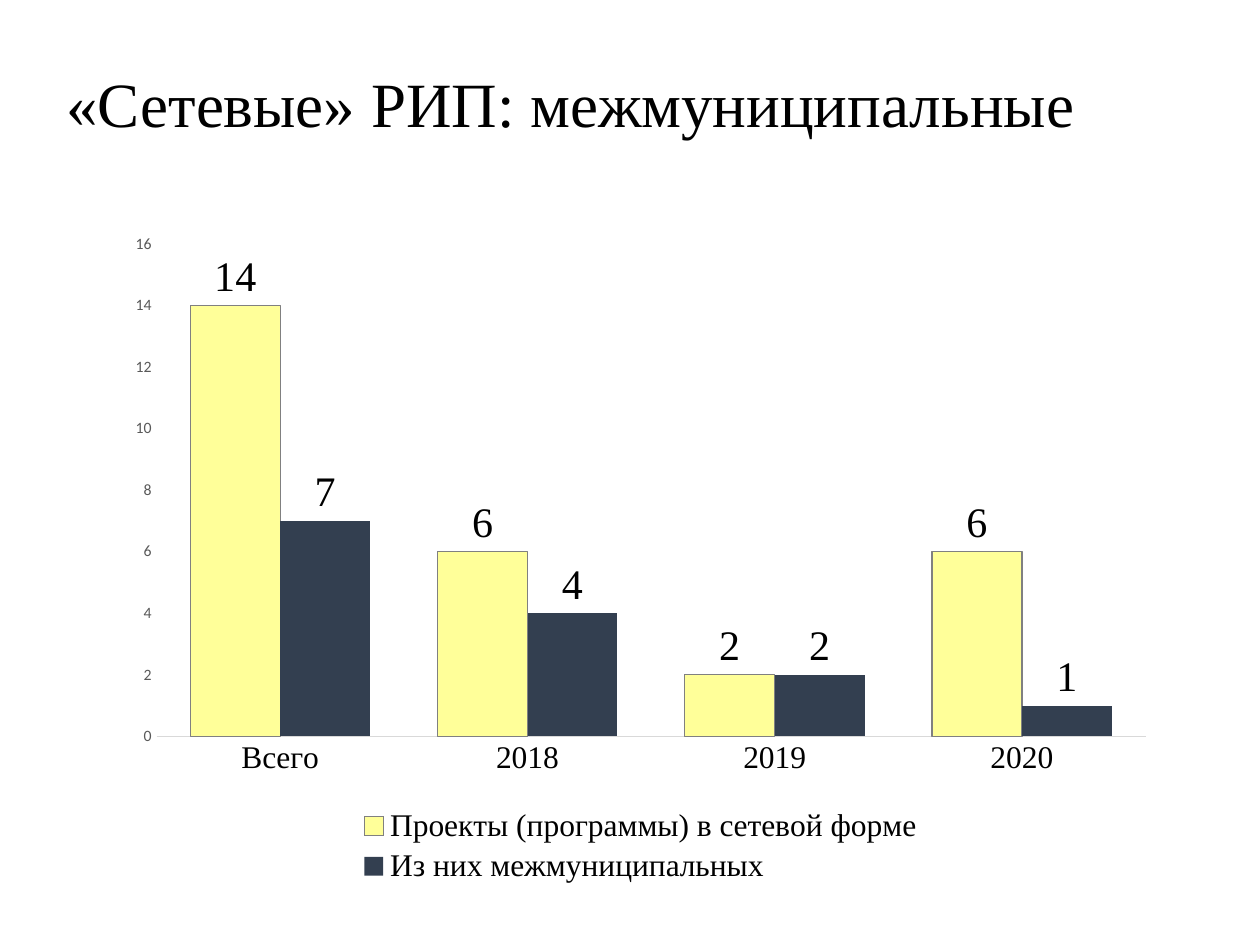
from lxml.etree import SubElement
from pptx import Presentation
from pptx.chart.data import CategoryChartData
from pptx.dml.color import RGBColor
from pptx.enum.chart import XL_CHART_TYPE as ChartType
from pptx.enum.chart import XL_LABEL_POSITION as LabelPosition
from pptx.enum.chart import XL_LEGEND_POSITION as LegendPosition
from pptx.enum.chart import XL_TICK_MARK as TickMark
from pptx.enum.text import MSO_ANCHOR as Anchor
from pptx.oxml.ns import qn
from pptx.util import Cm, Pt

HEADING = "«Сетевые» РИП: межмуниципальные"
PERIODS = ["Всего", "2018", "2019", "2020"]
PROJECTS = [
    {"name": "Проекты (программы) в сетевой форме", "counts": [14, 6, 2, 6],
     "fill": "FFFF99", "outline": "808080"},
    {"name": "Из них межмуниципальных", "counts": [7, 4, 2, 1],
     "fill": "333F50", "outline": None},
]
SERIF, SANS = "Times New Roman", "Calibri"
HEADING_BOX = [Cm(n) for n in (1.09, 0.33, 21.89, 3.68)]
CHART_BOX = [Cm(n) for n in (2.31, 4.52, 21.21, 13.41)]
# Left, top, width and height as shares of the chart
PLOT_AREA = (0.04, 0.03, 0.94, 0.74)
LEGEND_AREA = (0.23, 0.87, 0.54, 0.13)


def style_font(font, size, color="000000", name=SERIF):
    for attribute, value in {"size": Pt(size), "name": name, "bold": False}.items():
        setattr(font, attribute, value)
    font.color.rgb = RGBColor.from_string(color)


def style_line(line, color):
    if color is None:
        line.fill.background()
        return
    line.color.rgb = RGBColor.from_string(color)
    line.width = Pt(0.75)


def place(element, index, area, inner=False):
    """Give a chart part a fixed area, as shares of the chart."""
    for old in element.findall(qn("c:layout")):
        element.remove(old)
    layout = SubElement(element, qn("c:layout"))
    element.insert(index, layout)
    manual = SubElement(layout, qn("c:manualLayout"))
    settings = [("layoutTarget", "inner")] if inner else []
    settings += [("xMode", "edge"), ("yMode", "edge"), *zip("xywh", area)]
    for tag, value in settings:
        SubElement(manual, qn(f"c:{tag}"), val=str(value))


def add_heading(slide):
    frame = slide.shapes.add_textbox(*HEADING_BOX).text_frame
    frame.word_wrap = True
    frame.vertical_anchor = Anchor.MIDDLE
    paragraph = frame.paragraphs[0]
    paragraph.line_spacing = 0.9
    run = paragraph.add_run()
    run.text = HEADING
    style_font(run.font, 36)


def add_projects_chart(slide):
    data = CategoryChartData(number_format="General")
    data.categories = PERIODS
    for project in PROJECTS:
        data.add_series(project["name"], project["counts"])
    chart = slide.shapes.add_chart(
        ChartType.COLUMN_CLUSTERED, *CHART_BOX, data).chart
    style_font(chart.font, 10, name=SANS)
    chart.has_title = False

    plot = chart.plots[0]
    for attribute, value in {"gap_width": 75, "overlap": 0,
                             "vary_by_categories": False}.items():
        setattr(plot, attribute, value)
    for series, project in zip(plot.series, PROJECTS):
        series.format.fill.solid()
        series.format.fill.fore_color.rgb = RGBColor.from_string(project["fill"])
        style_line(series.format.line, project["outline"])
        labels = series.data_labels
        labels.show_value = True
        labels.position = LabelPosition.OUTSIDE_END
        style_font(labels.font, 24)

    periods, counts = chart.category_axis, chart.value_axis
    for axis, color in ((periods, "D9D9D9"), (counts, None)):
        for attribute, value in {"major_tick_mark": TickMark.NONE,
                                 "minor_tick_mark": TickMark.NONE,
                                 "has_major_gridlines": False}.items():
            setattr(axis, attribute, value)
        style_line(axis.format.line, color)
    style_font(periods.tick_labels.font, 18)
    style_font(counts.tick_labels.font, 9, "595959", SANS)
    for attribute, value in {"minimum_scale": 0, "maximum_scale": 16,
                             "major_unit": 2}.items():
        setattr(counts, attribute, value)

    chart.has_legend = True
    legend = chart.legend
    legend.position = LegendPosition.BOTTOM
    legend.include_in_layout = False
    style_font(legend.font, 18)
    chart_xml = chart.element.find(qn("c:chart"))
    place(chart_xml.find(qn("c:plotArea")), 0, PLOT_AREA, inner=True)
    place(chart_xml.find(qn("c:legend")), 1, LEGEND_AREA)


def main():
    deck = Presentation()
    deck.slide_width, deck.slide_height = Cm(25.4), Cm(19.05)
    slide = deck.slides.add_slide(deck.slide_layouts[6])
    add_heading(slide)
    add_projects_chart(slide)
    deck.save("out.pptx")


if __name__ == "__main__":
    main()
